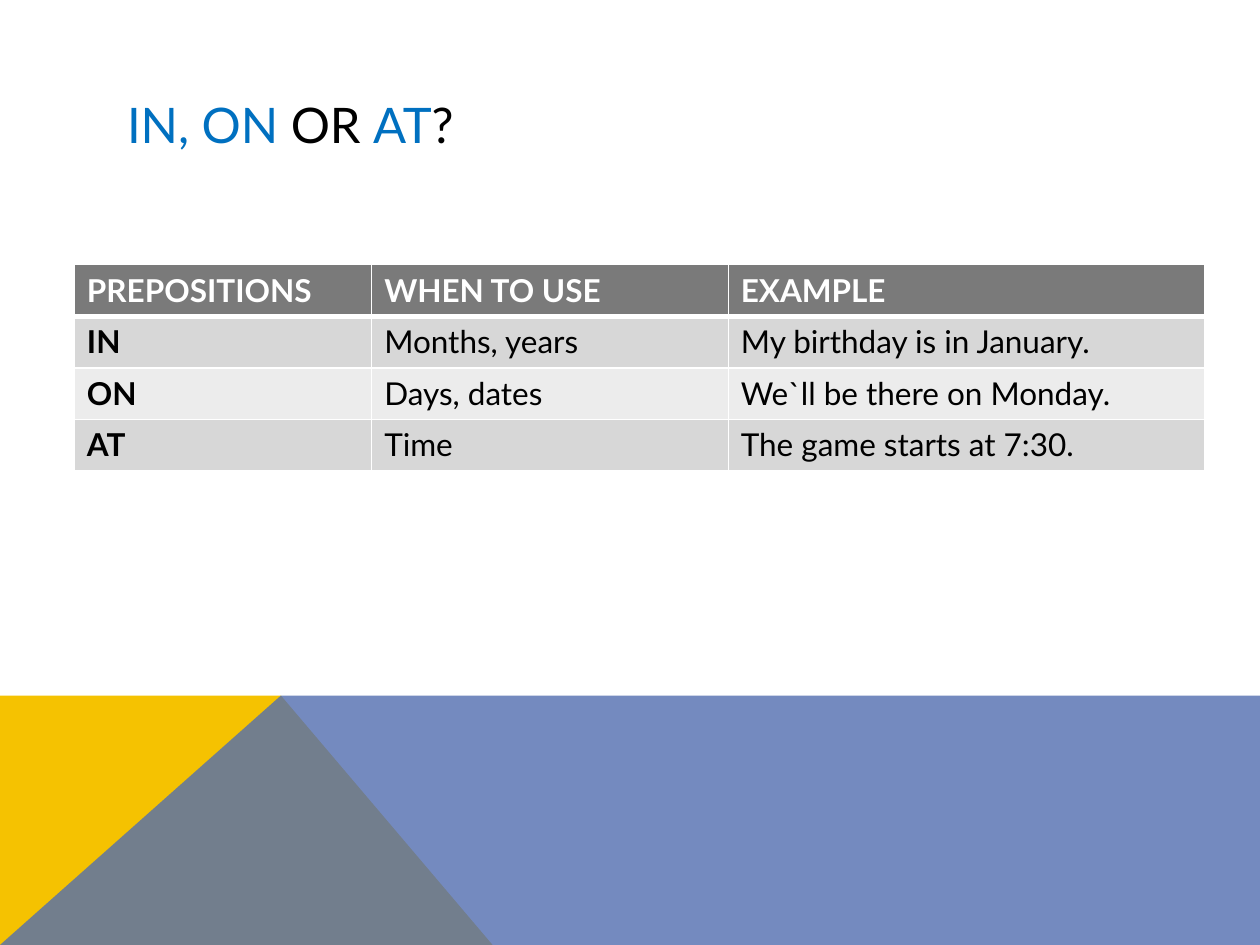
import pptx
import pptx.dml.color
import pptx.enum.text
import pptx.oxml
import pptx.oxml.ns
import pptx.util
from pptx.util import Inches

WHITE, BLACK, BLUE = "FFFFFF", "000000", "0070C0"


def color(code):
    return pptx.dml.color.RGBColor.from_string(code)


class Deck:
    face = "Lato"

    def __init__(self, wide, high):
        self.file = pptx.Presentation()
        self.file.slide_width = Inches(wide)
        self.file.slide_height = Inches(high)
        self.slide = self.file.slides.add_slide(self.file.slide_layouts[6])

    def style(self, font, size, code, bold=False):
        font.name = self.face
        font.size = pptx.util.Pt(size)
        font.bold = bold
        font.color.rgb = color(code)

    def shape(self, points, fill, alpha=100):
        first, *rest = [(Inches(x), Inches(y)) for x, y in points]
        pen = self.slide.shapes.build_freeform(*first)
        pen.add_line_segments(rest, close=True)
        form = pen.convert_to_shape()
        form.shadow.inherit = False
        form.line.fill.background()
        form.fill.solid()
        form.fill.fore_color.rgb = color(fill)
        if alpha < 100:
            tone = form.fill._xPr.find(".//" + pptx.oxml.ns.qn("a:srgbClr"))
            tone.append(pptx.oxml.parse_xml(
                f'<a:alpha {pptx.oxml.ns.nsdecls("a")} val="{alpha * 1000}"/>'))

    def title(self, runs, box, size):
        frame = self.slide.shapes.add_textbox(*map(Inches, box)).text_frame
        frame.word_wrap = True
        frame.vertical_anchor = pptx.enum.text.MSO_ANCHOR.MIDDLE
        for text, code in runs:
            run = frame.paragraphs[0].add_run()
            run.text = text
            self.style(run.font, size, code)

    def border(self, cell, **widths):
        props = cell._tc.get_or_add_tcPr()
        for side in "LRTB":
            width = pptx.util.Pt(widths.get(side, 1))
            props.append(pptx.oxml.parse_xml(
                f'<a:ln{side} {pptx.oxml.ns.nsdecls("a")} w="{width}">'
                f'<a:solidFill><a:srgbClr val="{WHITE}"/></a:solidFill>'
                f'</a:ln{side}>'))

    def table(self, rows, left, top, widths, high, size):
        box = (left, top, sum(widths), high * len(rows))
        grid = self.slide.shapes.add_table(
            len(rows), len(widths), *map(Inches, box)).table
        for col, width in zip(grid.columns, widths):
            col.width = Inches(width)
        for r, row in enumerate(rows):
            head = r == 0
            fill = "7A7A7A" if head else ("ECECEC", "D7D7D7")[r % 2]
            for c, text in enumerate(row):
                cell = grid.cell(r, c)
                # Borders must come before the fill in the cell's XML
                self.border(cell, T=3 if r == 1 else 1, B=3 if head else 1)
                cell.fill.solid()
                cell.fill.fore_color.rgb = color(fill)
                cell.text = text
                self.style(cell.text_frame.paragraphs[0].font, size,
                           WHITE if head else BLACK, head or c == 0)


def main():
    deck = Deck(10, 7.5)

    # Coloured band at the foot
    top, foot, peak = 5.52, 7.5, 2.23
    deck.shape([(0, foot), (0, top), (peak, top), (3.91, foot)], "F5C201")
    deck.shape([(0, foot), (peak, top), (10, top), (10, foot)], "526DB0", 80)

    # Title
    deck.title([("IN, ON ", BLUE), ("OR ", BLACK), ("AT", BLUE), ("?", BLACK)],
               (0.91, 0.68, 8.22, 0.6), 28)

    # Table of prepositions
    deck.table([
        ("PREPOSITIONS", "WHEN TO USE", "EXAMPLE"),
        ("IN", "Months, years", "My birthday is in January."),
        ("ON", "Days, dates", "We`ll be there on Monday."),
        ("AT", "Time", "The game starts at 7:30."),
    ], 0.59, 2.1, (2.36, 2.83, 3.78), 0.41, 18)

    deck.file.save("out.pptx")


if __name__ == "__main__":
    main()
